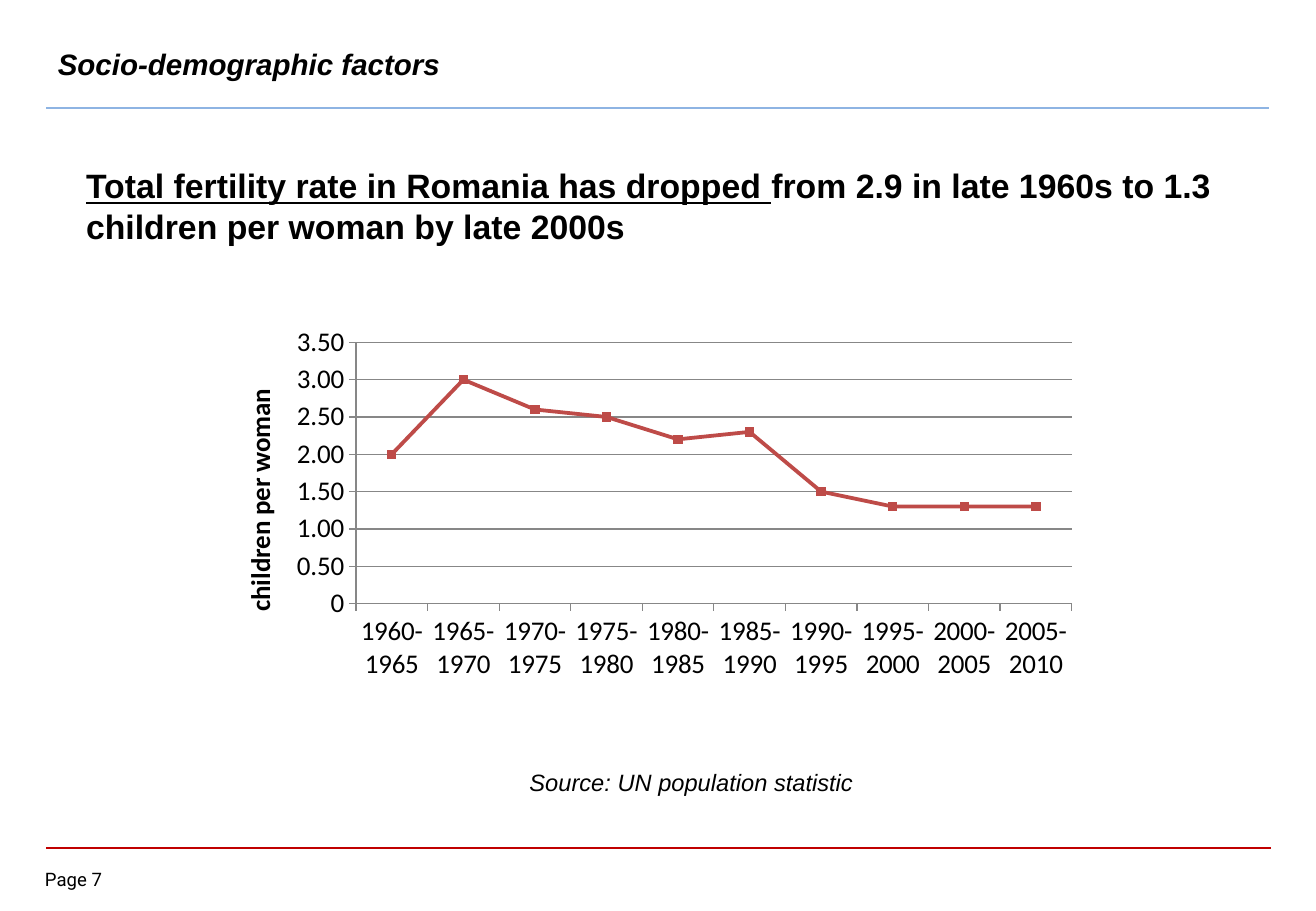
from dataclasses import dataclass

from lxml.etree import SubElement
from pptx import Presentation
from pptx.chart.data import CategoryChartData
from pptx.dml.color import RGBColor
from pptx.enum.chart import XL_CHART_TYPE, XL_MARKER_STYLE, XL_TICK_MARK
from pptx.enum.shapes import MSO_CONNECTOR
from pptx.enum.text import MSO_ANCHOR, PP_ALIGN
from pptx.oxml import parse_xml
from pptx.oxml.ns import nsdecls, qn
from pptx.util import Cm, Pt


@dataclass(frozen=True)
class Theme:
    text: RGBColor = RGBColor(0x00, 0x00, 0x00)
    header_rule: RGBColor = RGBColor(0x8E, 0xB4, 0xE3)
    footer_rule: RGBColor = RGBColor(0xC0, 0x00, 0x00)
    series: RGBColor = RGBColor(0xBE, 0x4B, 0x48)
    axis: RGBColor = RGBColor(0x87, 0x87, 0x87)
    body_font: str = "Arial"
    chart_font: str = "Calibri"
    footer_font: str = "Roboto"
    heading_size: float = 17.5
    statement_size: float = 20
    chart_size: float = 16
    source_size: float = 14
    footer_size: float = 11


THEME = Theme()

FERTILITY_RATES = [2, 3, 2.6, 2.5, 2.2, 2.3, 1.5, 1.3, 1.3, 1.3]
PERIODS = [f"{year}-{year + 5}" for year in range(1960, 2010, 5)]


def style_font(font, size, name=THEME.body_font, bold=False, italic=False, underline=False):
    font.name = name
    font.size = Pt(size)
    font.bold = bold
    font.italic = italic
    font.underline = underline
    font.color.rgb = THEME.text


def add_text(slide, text, left, top, width, height, size, underlined="", margins=True,
             anchor=MSO_ANCHOR.TOP, align=PP_ALIGN.LEFT, **font_format):
    """Add a one-paragraph box; the underlined words come before the text."""
    box = slide.shapes.add_textbox(Cm(left), Cm(top), Cm(width), Cm(height))
    frame = box.text_frame
    frame.word_wrap = True
    frame.vertical_anchor = anchor
    if not margins:
        frame.margin_left = frame.margin_right = frame.margin_top = frame.margin_bottom = 0
    para = frame.paragraphs[0]
    para.alignment = align
    for words, underline in ((underlined, True), (text, False)):
        if words:
            span = para.add_run()
            span.text = words
            style_font(span.font, size, underline=underline, **font_format)


def add_rule(slide, left, right, top, color, weight):
    rule = slide.shapes.add_connector(
        MSO_CONNECTOR.STRAIGHT, Cm(left), Cm(top), Cm(right), Cm(top))
    rule.line.color.rgb = color
    rule.line.width = Pt(weight)
    SubElement(rule._element.spPr, qn("a:effectLst"))


def set_layout(element, index, target="", **fractions):
    """Place a chart part by fractions of the chart's size."""
    for layout in element.findall(qn("c:layout")):
        element.remove(layout)
    inner = f'<c:layoutTarget val="{target}"/>' if target else ""
    modes = "".join(f'<c:{key}Mode val="edge"/>' for key in ("x", "y"))
    values = "".join(f'<c:{key} val="{value}"/>' for key, value in fractions.items())
    element.insert(index, parse_xml(
        f'<c:layout {nsdecls("c")}><c:manualLayout>{inner}{modes}{values}'
        "</c:manualLayout></c:layout>"))


def style_axis(axis):
    axis.major_tick_mark = XL_TICK_MARK.OUTSIDE
    axis.minor_tick_mark = XL_TICK_MARK.NONE
    axis.format.line.color.rgb = THEME.axis
    axis.format.line.width = Pt(0.75)
    style_font(axis.tick_labels.font, THEME.chart_size, THEME.chart_font)


def style_value_axis(axis):
    axis.minimum_scale, axis.maximum_scale, axis.major_unit = 0, 3.5, 0.5
    axis.tick_labels.number_format = r"##0.00;\-##0.00;0"
    axis.tick_labels.number_format_is_linked = False
    axis.has_major_gridlines = True
    axis.major_gridlines.format.line.color.rgb = THEME.axis
    axis.major_gridlines.format.line.width = Pt(0.75)
    axis.has_title = True
    para = axis.axis_title.text_frame.paragraphs[0]
    span = para.add_run()
    span.text = "children per woman"
    style_font(span.font, THEME.chart_size, THEME.chart_font, bold=True)
    set_layout(axis.axis_title._element, 1, x=0, y=0.15)


def style_series(series):
    series.smooth = False
    series.format.line.color.rgb = THEME.series
    series.format.line.width = Pt(2.25)
    series.marker.style = XL_MARKER_STYLE.SQUARE
    series.marker.size = 5
    series.marker.format.fill.solid()
    series.marker.format.fill.fore_color.rgb = THEME.series
    series.marker.format.line.color.rgb = THEME.series


def add_fertility_chart(slide, left, top, width, height):
    data = CategoryChartData(number_format="0.0")
    data.categories = PERIODS
    data.add_series("Series 1", FERTILITY_RATES)
    chart = slide.shapes.add_chart(
        XL_CHART_TYPE.LINE_MARKERS, Cm(left), Cm(top), Cm(width), Cm(height), data).chart
    chart.has_legend = False
    chart.has_title = False
    style_font(chart.font, THEME.chart_size, THEME.chart_font)
    chart.plots[0].vary_by_categories = False
    style_axis(chart.category_axis)
    style_axis(chart.value_axis)
    style_value_axis(chart.value_axis)
    style_series(chart.plots[0].series[0])
    plot_area = chart._chartSpace.chart.plotArea
    set_layout(plot_area, 0, target="inner", x=0.14, y=0.05, w=0.84, h=0.62)


def main():
    deck = Presentation()
    deck.slide_width, deck.slide_height = Cm(27.51), Cm(19.05)
    slide = deck.slides.add_slide(deck.slide_layouts[6])

    add_rule(slide, 0.97, 26.57, 17.73, THEME.footer_rule, 1)
    add_rule(slide, 0.97, 26.52, 2.26, THEME.header_rule, 1.5)
    add_text(slide, "Page 7", 0.94, 18.15, 1.85, 0.56, THEME.footer_size,
             name=THEME.footer_font, margins=False)
    add_text(slide, "from 2.9 in late 1960s to 1.3 children per woman by late 2000s",
             1.55, 3.33, 24.99, 1.96, THEME.statement_size, bold=True,
             underlined="Total fertility rate in Romania has dropped ")
    add_fertility_chart(slide, 4.95, 6.72, 17.81, 8.81)
    add_text(slide, "Socio-demographic factors", 0.96, 0.73, 19.43, 1.19,
             THEME.heading_size, anchor=MSO_ANCHOR.MIDDLE, bold=True, italic=True)
    add_text(slide, "Source: UN population statistic", 4.55, 15.93, 19.81, 0.86,
             THEME.source_size, align=PP_ALIGN.CENTER, italic=True)
    deck.save("out.pptx")


if __name__ == "__main__":
    main()
